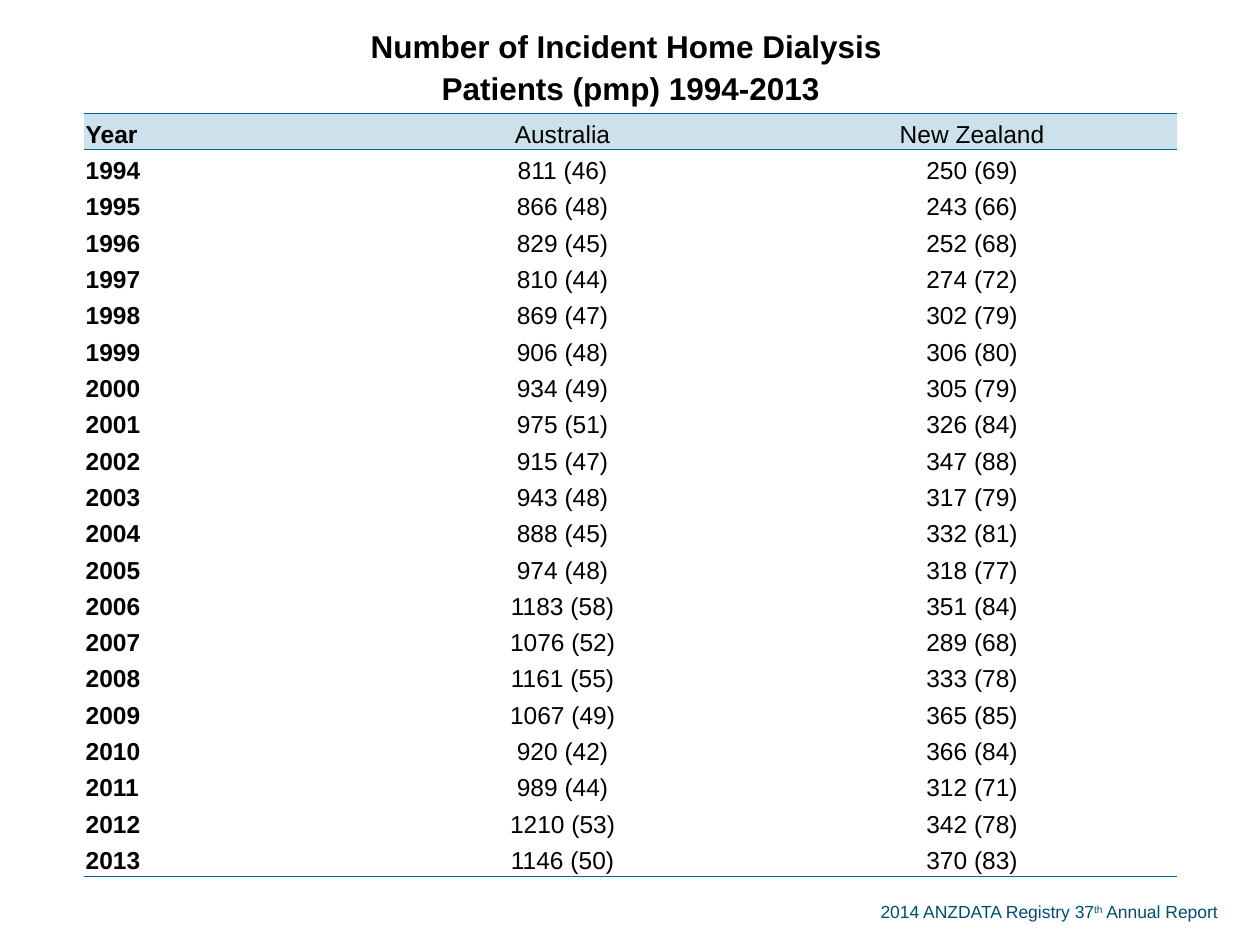
from lxml.etree import SubElement
from pptx import Presentation
from pptx.dml.color import RGBColor
from pptx.enum.text import MSO_ANCHOR, PP_ALIGN
from pptx.oxml.ns import qn
from pptx.util import Inches, Pt

COLORS = {"text": "000000", "rule": "006699", "header": "CCE1EB", "footer": "004D73"}
FONT = "Arial"
NO_STYLE = "{2D5ABB26-0587-4C30-8999-92F81FD0307C}"
TITLE = "Number of Incident Home Dialysis \nPatients (pmp) 1994-2013"
HEADERS = ("Year", "Australia", "New Zealand")
FIRST_YEAR = 1994

# Patients and patients per million, one pair a year
AUSTRALIA = [
    (811, 46), (866, 48), (829, 45), (810, 44), (869, 47),
    (906, 48), (934, 49), (975, 51), (915, 47), (943, 48),
    (888, 45), (974, 48), (1183, 58), (1076, 52), (1161, 55),
    (1067, 49), (920, 42), (989, 44), (1210, 53), (1146, 50),
]
NEW_ZEALAND = [
    (250, 69), (243, 66), (252, 68), (274, 72), (302, 79),
    (306, 80), (305, 79), (326, 84), (347, 88), (317, 79),
    (332, 81), (318, 77), (351, 84), (289, 68), (333, 78),
    (365, 85), (366, 84), (312, 71), (342, 78), (370, 83),
]

TABLE_LEFT, TABLE_TOP = 0.67, 0.13
HEADER_TOP, TABLE_BOTTOM = 0.9, 6.96
COLUMN_WIDTHS = (2.17, 3.25, 3.25)


def add_text(paragraph, text, size=14, color="text", bold=False, superscript=False):
    for index, line in enumerate(text.split("\n")):
        if index:
            paragraph.add_line_break()
        run = paragraph.add_run()
        run.text = line
        run.font.name = FONT
        run.font.size = Pt(size)
        run.font.bold = bold
        run.font.color.rgb = RGBColor.from_string(COLORS[color])
        if superscript:
            run.font._element.set("baseline", "30000")


def set_borders(cell, ruled_sides):
    properties = cell._tc.get_or_add_tcPr()
    for position, side in enumerate(("L", "R", "T", "B")):
        line = SubElement(properties, qn(f"a:ln{side}"))
        if side in ruled_sides:
            line.set("w", str(Pt(0.5)))
            fill = SubElement(line, qn("a:solidFill"))
            SubElement(fill, qn("a:srgbClr")).set("val", COLORS["rule"])
        else:
            line.set("w", "0")
            SubElement(line, qn("a:noFill"))
        properties.insert(position, line)


def format_cell(cell, text, centered=True, fill=None, ruled_sides="", **text_format):
    cell.margin_left = cell.margin_right = cell.margin_top = Inches(0.01)
    cell.margin_bottom = 0
    cell.vertical_anchor = MSO_ANCHOR.MIDDLE
    if fill:
        cell.fill.solid()
        cell.fill.fore_color.rgb = RGBColor.from_string(COLORS[fill])
    else:
        cell.fill.background()
    set_borders(cell, ruled_sides)
    paragraph = cell.text_frame.paragraphs[0]
    paragraph.alignment = PP_ALIGN.CENTER if centered else PP_ALIGN.LEFT
    paragraph.line_spacing = 1.19
    paragraph.space_after = Pt(14)
    add_text(paragraph, text, **text_format)


def add_patient_table(slide):
    rows = [HEADERS]
    for offset, pairs in enumerate(zip(AUSTRALIA, NEW_ZEALAND)):
        values = [f"{count} ({rate})" for count, rate in pairs]
        rows.append((str(FIRST_YEAR + offset), *values))

    frame = slide.shapes.add_table(
        len(rows) + 1, len(HEADERS), Inches(TABLE_LEFT), Inches(TABLE_TOP),
        Inches(sum(COLUMN_WIDTHS)), Inches(TABLE_BOTTOM - TABLE_TOP))
    table = frame.table
    table.first_row = table.horz_banding = False
    table._tbl.tblPr.find(qn("a:tableStyleId")).text = NO_STYLE
    for column, width in zip(table.columns, COLUMN_WIDTHS):
        column.width = Inches(width)
    for row in table.rows:
        row.height = Inches((TABLE_BOTTOM - HEADER_TOP) / len(rows))
    table.rows[0].height = Inches(HEADER_TOP - TABLE_TOP)

    # Title across all columns
    title = table.cell(0, 0)
    title.merge(table.cell(0, len(HEADERS) - 1))
    format_cell(title, TITLE, ruled_sides="B", size=18, bold=True)
    for column in range(1, len(HEADERS)):
        set_borders(table.cell(0, column), "B")

    # Header and yearly rows
    ruled_rows = {1: "TB", 2: "T", len(rows): "B"}
    for row, values in enumerate(rows, start=1):
        for column, text in enumerate(values):
            format_cell(table.cell(row, column), text, centered=column > 0,
                        fill="header" if row == 1 else None,
                        ruled_sides=ruled_rows.get(row, ""), bold=column == 0)


def add_footer(slide):
    box = slide.shapes.add_textbox(Inches(6.89), Inches(7.1), Inches(2.99), Inches(0.27))
    box.text_frame.word_wrap = True
    paragraph = box.text_frame.paragraphs[0]
    add_text(paragraph, "2014 ANZDATA Registry 37", size=10, color="footer")
    add_text(paragraph, "th", size=10, color="footer", superscript=True)
    add_text(paragraph, " Annual Report", size=10, color="footer")


def main():
    presentation = Presentation()
    presentation.slide_width = Inches(10)
    presentation.slide_height = Inches(7.5)
    slide = presentation.slides.add_slide(presentation.slide_layouts[6])
    add_footer(slide)
    add_patient_table(slide)
    presentation.save("out.pptx")


if __name__ == "__main__":
    main()
